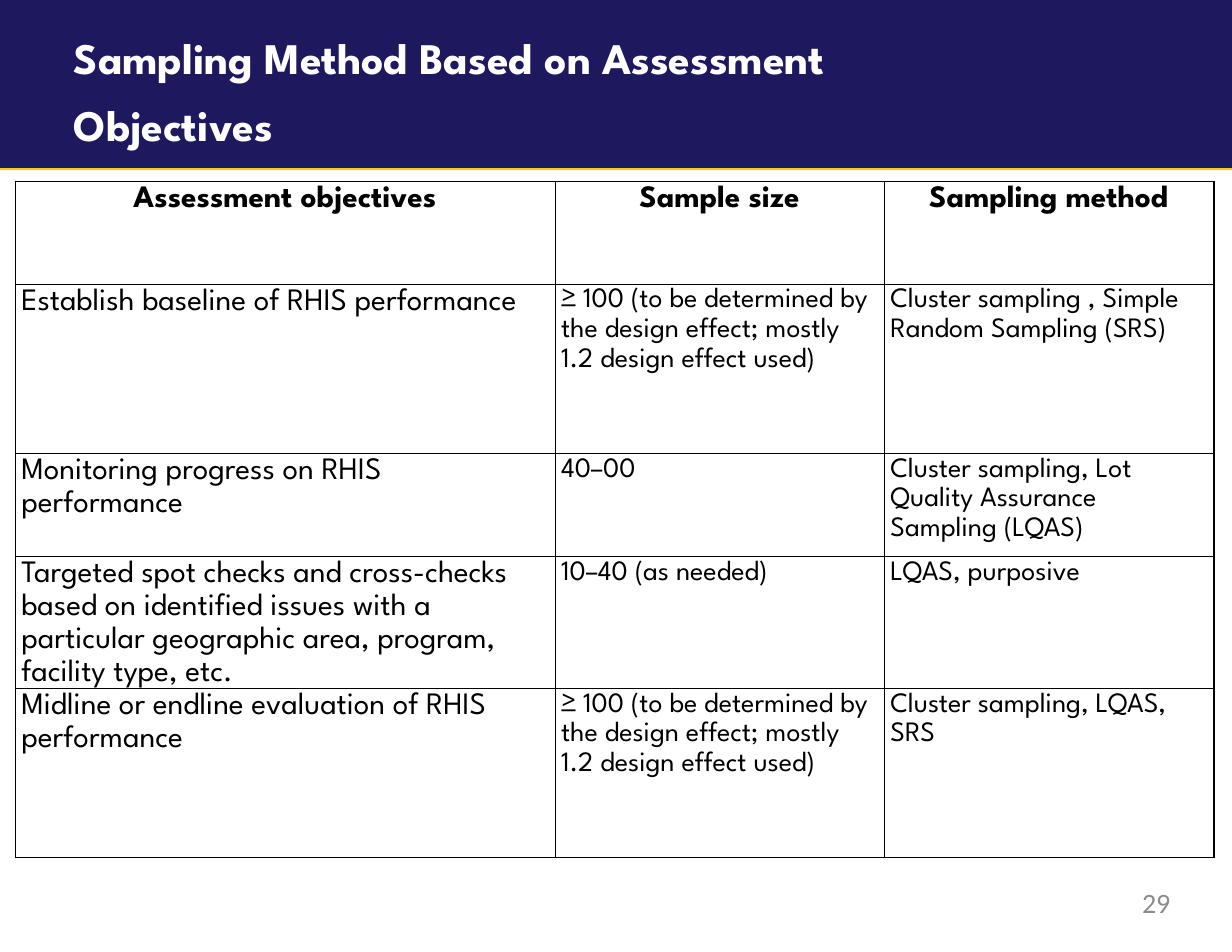
from lxml.etree import SubElement
from pptx import Presentation
from pptx.dml.color import RGBColor
from pptx.enum.shapes import MSO_SHAPE as Preset
from pptx.enum.text import MSO_ANCHOR as Anchor, PP_ALIGN as Align
from pptx.oxml.ns import qn
from pptx.util import Inches, Pt

COLORS = {"navy": "1E185F", "gold": "ECCE18", "white": "FFFFFF", "black": "000000", "gray": "8C8C8C"}
WIDTH, HEIGHT = 11, 8.5
BAND = 1.52
LEADING = 1.06
COLUMNS = [4.82, 2.94, 2.94]
ROW_HEIGHTS = [0.92, 1.51, 0.92, 1.18, 1.51]
LARGE_SAMPLE = "≥ 100 (to be determined by the design effect; mostly 1.2 design effect used)"
ROWS = [
    ["Assessment objectives", "Sample size", "Sampling method"],
    ["Establish baseline of RHIS performance", LARGE_SAMPLE,
     "Cluster sampling , Simple Random Sampling (SRS)"],
    ["Monitoring progress on RHIS performance", "40–00",
     "Cluster sampling, Lot Quality Assurance Sampling (LQAS)"],
    ["Targeted spot checks and cross-checks based on identified issues with a particular "
     "geographic area, program, facility type, etc.", "10–40 (as needed)", "LQAS, purposive"],
    ["Midline or endline evaluation of RHIS performance", LARGE_SAMPLE, "Cluster sampling, LQAS, SRS"],
]


def color(name):
    """Return the named colour."""
    return RGBColor.from_string(COLORS[name])


def write(frame, text, size=18, font="League Spartan", ink="black", bold=False,
          align=Align.LEFT, spacing=None):
    """Write one formatted paragraph into a text frame."""
    para = frame.paragraphs[0]
    para.alignment = align
    para.line_spacing = spacing
    span = para.add_run()
    span.text = text
    span.font.size = Pt(size)
    span.font.name = font
    span.font.bold = bold
    span.font.color.rgb = color(ink)


def add_band(page, top, fill):
    """Add a full-width header band."""
    band = page.shapes.add_shape(Preset.RECTANGLE, 0, Inches(top), Inches(WIDTH), Inches(BAND))
    band.shadow.inherit = False
    band.fill.solid()
    band.fill.fore_color.rgb = color(fill)
    band.line.fill.background()


def add_text(page, area, text, **style):
    """Add a wrapping text box without insets."""
    box = page.shapes.add_textbox(*map(Inches, area))
    frame = box.text_frame
    frame.word_wrap = True
    frame.margin_left = frame.margin_right = frame.margin_top = frame.margin_bottom = 0
    write(frame, text, **style)


def add_borders(cell, points=1):
    """Draw a solid black line on each side of a cell."""
    props = cell._tc.get_or_add_tcPr()
    for side in ("lnL", "lnR", "lnT", "lnB"):
        line = SubElement(props, qn(f"a:{side}"), w=str(Pt(points)))
        SubElement(SubElement(line, qn("a:solidFill")), qn("a:srgbClr"), val=COLORS["black"])


def fill_cell(cell, text, size, **style):
    """Format one table cell and write its text."""
    cell.margin_left, cell.margin_right = Inches(0.05), Inches(0.06)
    cell.margin_top = cell.margin_bottom = 0
    cell.vertical_anchor = Anchor.TOP
    add_borders(cell)
    cell.fill.background()
    write(cell.text_frame, text, size=size, spacing=Pt(size * LEADING), **style)


def add_grid(page, left, top):
    """Add the table of objectives, sample sizes and methods."""
    table = page.shapes.add_table(len(ROWS), len(COLUMNS), Inches(left), Inches(top),
                                  Inches(sum(COLUMNS)), Inches(sum(ROW_HEIGHTS))).table
    table.horz_banding = False
    for column, width in zip(table.columns, COLUMNS):
        column.width = Inches(width)
    for r, (texts, height) in enumerate(zip(ROWS, ROW_HEIGHTS)):
        table.rows[r].height = Inches(height)
        for c, text in enumerate(texts):
            header = r == 0
            fill_cell(table.cell(r, c), text, 20 if header or c == 0 else 18,
                      bold=header, align=Align.CENTER if header else Align.LEFT)


def main():
    """Build and save the slide."""
    deck = Presentation()
    deck.slide_width, deck.slide_height = Inches(WIDTH), Inches(HEIGHT)
    page = deck.slides.add_slide(deck.slide_layouts[6])
    add_band(page, 0, "gold")
    add_text(page, (0.72 * WIDTH, 0.93 * HEIGHT, 0.23 * WIDTH, 0.05 * HEIGHT), "29",
             font="Calibri", ink="gray", align=Align.RIGHT)
    add_band(page, -0.02, "navy")
    add_text(page, (0.66, 0.15, 8.27, 1.14), "Sampling Method Based on Assessment Objectives",
             size=28, ink="white", bold=True, spacing=Pt(43))
    add_grid(page, 0.14, 1.62)
    deck.save("out.pptx")


if __name__ == "__main__":
    main()
